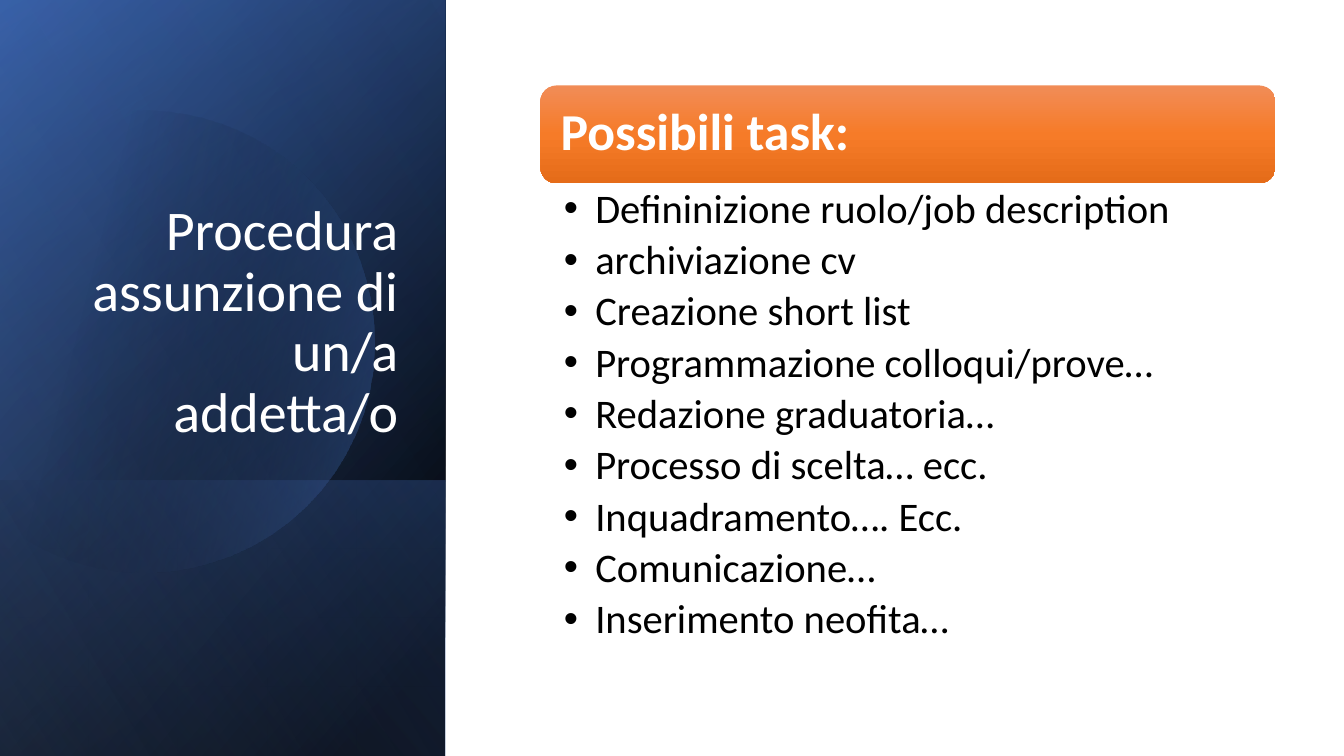
"""Build the slide listing the tasks of a hiring procedure."""
from lxml.etree import SubElement
from pptx import Presentation
from pptx.dml.color import RGBColor
from pptx.enum.shapes import MSO_SHAPE as SHAPE
from pptx.enum.text import MSO_ANCHOR as ANCHOR, PP_ALIGN as ALIGN
from pptx.oxml import parse_xml
from pptx.oxml.ns import nsdecls, qn
from pptx.util import Pt

COLORS = {
    "black": "000000", "white": "FFFFFF", "navy": "2F5597", "blue": "4472C4",
    "sky": "8FAADC", "peach": "F18C57", "orange": "F67B28", "rust": "E56C19",
}


def fill_gradient(shape, stops, angle):
    """Fill with (position, colour, opacity) stops, all in percent."""
    shape.shadow.inherit = False
    shape.line.fill.background()
    shape.fill.background()
    stop_xml = "".join(
        f'<a:gs pos="{position * 1000}"><a:srgbClr val="{COLORS[color]}">'
        f'<a:alpha val="{opacity * 1000}"/></a:srgbClr></a:gs>'
        for position, color, opacity in stops)
    gradient = parse_xml(
        f'<a:gradFill {nsdecls("a")} rotWithShape="1"><a:gsLst>{stop_xml}</a:gsLst>'
        f'<a:lin ang="{angle * 60000}" scaled="0"/></a:gradFill>')
    properties = shape._element.spPr
    properties.replace(properties.find(qn("a:noFill")), gradient)


def add_text(box, lines, insets, anchor, size, color, bold=False, align=ALIGN.LEFT,
             after=0, bullet_indent=0):
    """Place a text box at box and write one paragraph per line."""
    frame = slide.shapes.add_textbox(*map(Pt, box)).text_frame
    left, top, right, bottom = map(Pt, insets)
    settings = {"word_wrap": True, "vertical_anchor": anchor, "margin_left": left,
                "margin_top": top, "margin_right": right, "margin_bottom": bottom}
    for name, value in settings.items():
        setattr(frame, name, value)
    frame.text = "\n".join(lines)
    for paragraph in frame.paragraphs:
        if bullet_indent:
            properties = paragraph._p.get_or_add_pPr()
            properties.set("marL", str(Pt(bullet_indent)))
            properties.set("indent", str(-Pt(bullet_indent)))
            SubElement(properties, qn("a:buFont"), typeface="Arial")
            SubElement(properties, qn("a:buChar"), char="•")
        for name, value in {"alignment": align, "line_spacing": 0.9,
                            "space_after": Pt(after)}.items():
            setattr(paragraph, name, value)
        for name, value in {"name": "Calibri", "size": Pt(size), "bold": bold}.items():
            setattr(paragraph.font, name, value)
        paragraph.font.color.rgb = RGBColor.from_string(COLORS[color])


presentation = Presentation()
presentation.slide_width, presentation.slide_height = Pt(960), Pt(540)
slide = presentation.slides.add_slide(presentation.slide_layouts[6])

full_panel = (-111, 111, 540, 318)
panels = [
    (full_panel, [(8, "black", 100), (100, "navy", 100)], 50),
    (full_panel, [(0, "black", 0), (99, "blue", 46)], 30),
    ((60.5, 282.5, 197, 318), [(2, "blue", 29), (100, "black", 30)], 130),
    (full_panel, [(0, "black", 0), (99, "sky", 11)], 120),
]
circle_start = (107, 79)
circle_curves = [
    ((177, 81), (241, 127), (261, 198)),
    ((287, 286), (236, 377), (149, 402)),
    ((94, 418), (38, 404), (-2, 370)),
    ((-5, 367), (-8, 365), (-11, 362)),
    ((-11, 283), (-11, 205), (-11, 126)),
    ((-7, 122), (-4, 119), (0, 116)),
    ((16, 102), (36, 92), (58, 86)),
    ((74, 81), (91, 79), circle_start),
]

for index, (box, stops, angle) in enumerate(panels):
    if index == 3:
        outline, start = [], circle_start
        for first, second, end in circle_curves:
            for step in range(1, 17):
                t = step / 16
                outline.append(tuple(
                    Pt((1 - t) ** 3 * a + 3 * t * (1 - t) ** 2 * b
                       + 3 * t ** 2 * (1 - t) * c + t ** 3 * d)
                    for a, b, c, d in zip(start, first, second, end)))
            start = end
        builder = slide.shapes.build_freeform(*map(Pt, circle_start))
        builder.add_line_segments(outline, close=True)
        fill_gradient(builder.convert_to_shape(),
                      [(29, "black", 0), (100, "blue", 43)], 14)
    panel = slide.shapes.add_shape(SHAPE.RECTANGLE, *map(Pt, box))
    panel.rotation = 90
    panel._element.spPr.find(qn("a:xfrm")).set("flipH", "1")
    fill_gradient(panel, stops, angle)

add_text((46, 132.5, 245.5, 188.5), ["Procedura assunzione di un/a addetta/o"],
         (7.2, 3.6, 7.2, 3.6), ANCHOR.BOTTOM, 40, "white", align=ALIGN.RIGHT)

header = slide.shapes.add_shape(SHAPE.ROUNDED_RECTANGLE, Pt(386), Pt(61), Pt(525), Pt(70))
fill_gradient(header, [(0, "peach", 100), (50, "orange", 100), (100, "rust", 100)], 90)
add_text((389.5, 64, 518.5, 63.5), ["Possibili task:"], (11, 11, 11, 11),
         ANCHOR.MIDDLE, 37, "white", bold=True)

tasks = [
    "Defininizione ruolo/job description",
    "archiviazione cv",
    "Creazione short list",
    "Programmazione colloqui/prove…",
    "Redazione graduatoria…",
    "Processo di scelta… ecc.",
    "Inquadramento…. Ecc.",
    "Comunicazione…",
    "Inserimento neofita…",
]
add_text((386, 131, 525, 355.5), tasks, (16.7, 3.6, 20.6, 3.6), ANCHOR.TOP, 29,
         "black", after=5.3, bullet_indent=22.5)

presentation.save("out.pptx")
